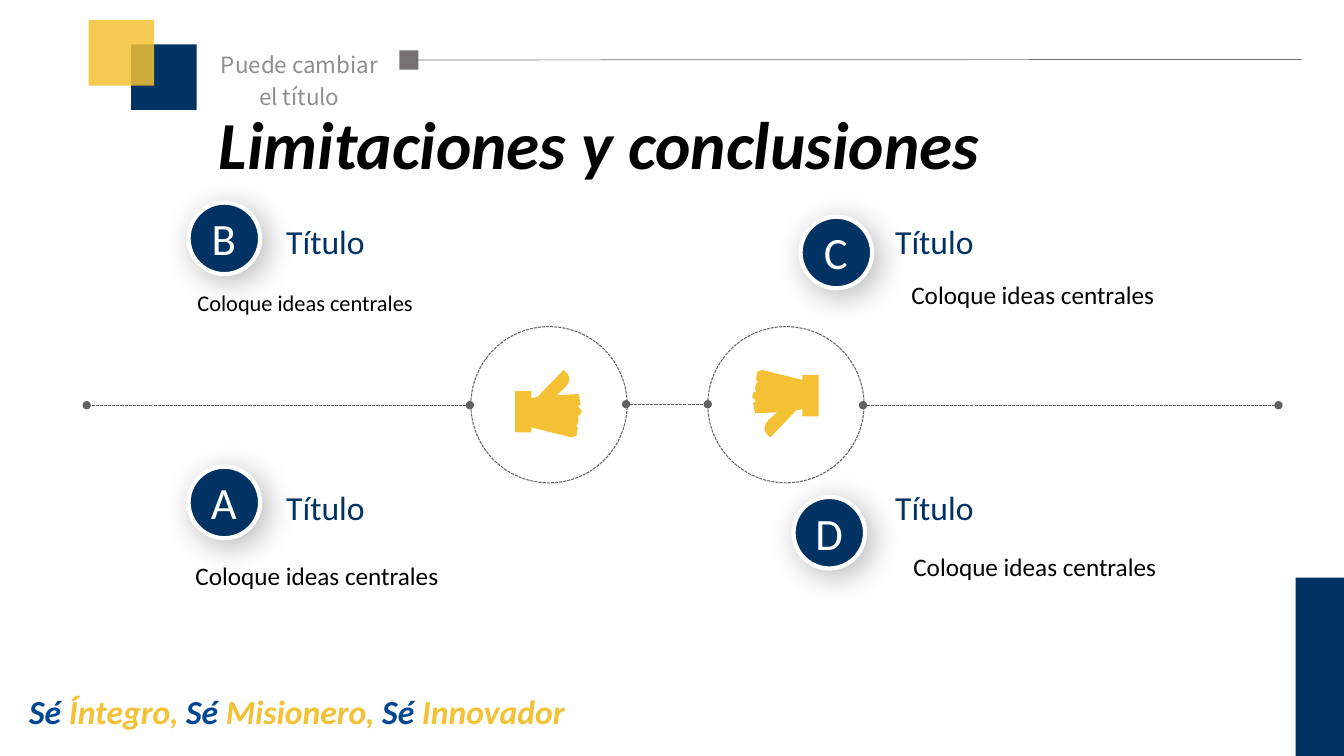
from lxml.etree import SubElement
from pptx import Presentation
from pptx.dml.color import RGBColor
from pptx.enum.dml import MSO_LINE
from pptx.enum.shapes import MSO_CONNECTOR, MSO_SHAPE
from pptx.enum.text import MSO_ANCHOR, MSO_AUTO_SIZE, PP_ALIGN
from pptx.oxml.ns import qn
from pptx.util import Inches, Pt

COLORS = {
    "navy": "003264", "gold": "F3C133", "blue": "004692", "stone": "767171",
    "dash": "626262", "muted": "8E8E8E", "black": "000000", "white": "FFFFFF",
}


def rgb(name):
    return RGBColor.from_string(COLORS[name])


class SlideBuilder:
    font = "Calibri"

    def __init__(self, slide):
        self.slide = slide
        self.shapes = slide.shapes

    def add_runs(self, frame, runs, size, font=None, bold=None, italic=None,
                 align=None, spacing=None):
        paragraph = frame.paragraphs[0]
        paragraph.alignment = align
        paragraph.line_spacing = spacing
        for words, color in runs:
            run = paragraph.add_run()
            run.text = words
            run.font.name = font or self.font
            run.font.size = Pt(size)
            run.font.bold, run.font.italic = bold, italic
            run.font.color.rgb = rgb(color)

    def text(self, box, runs, size, wrap=True, grow=True, margin=None,
             anchor=MSO_ANCHOR.TOP, **style):
        frame = self.shapes.add_textbox(*map(Inches, box)).text_frame
        frame.word_wrap = wrap
        frame.auto_size = MSO_AUTO_SIZE.SHAPE_TO_FIT_TEXT if grow else MSO_AUTO_SIZE.NONE
        frame.vertical_anchor = anchor
        if margin is not None:
            frame.margin_left = frame.margin_right = Inches(margin)
            frame.margin_top = frame.margin_bottom = Inches(margin)
        self.add_runs(frame, runs, size, **style)

    def title(self, box, words, size):
        title = self.shapes.title
        title.left, title.top, title.width, title.height = map(Inches, box)
        frame = title.text_frame
        frame.word_wrap = True
        frame.auto_size = MSO_AUTO_SIZE.NONE
        frame.vertical_anchor = MSO_ANCHOR.BOTTOM
        self.add_runs(frame, [(words, "black")], size, bold=True, italic=True,
                      align=PP_ALIGN.CENTER, spacing=0.9)

    def paint(self, shape, fill):
        shape.shadow.inherit = False
        shape.line.fill.background()
        if fill:
            shape.fill.solid()
            shape.fill.fore_color.rgb = rgb(fill)
        else:
            shape.fill.background()
        return shape

    def shape(self, kind, box, fill=None, alpha=None):
        shape = self.paint(self.shapes.add_shape(kind, *map(Inches, box)), fill)
        if alpha:
            color = shape._element.spPr.find(qn("a:solidFill"))[0]
            SubElement(color, qn("a:alpha"), val=str(alpha * 1000))
        return shape

    def dash(self, line):
        line.color.rgb = rgb("dash")
        line.width = Pt(0.75)
        line.dash_style = MSO_LINE.SQUARE_DOT

    def connector(self, start, end):
        line = self.shapes.add_connector(MSO_CONNECTOR.STRAIGHT,
                                         *map(Inches, (*start, *end)))
        line.line.color.rgb = rgb("stone")
        line.line.width = Pt(0.5)
        SubElement(line._element.spPr, qn("a:effectLst"))
        return line

    def dotted_link(self, start, end):
        link = self.connector(start, end)
        self.dash(link.line)
        outline = link._element.spPr.find(qn("a:ln"))
        for tip in ("a:headEnd", "a:tailEnd"):
            SubElement(outline, qn(tip), type="oval")

    def ring(self, left, top, size):
        self.dash(self.shape(MSO_SHAPE.OVAL, (left, top, size, size)).line)

    def outline(self, points, fill):
        corners = [(Inches(x), Inches(y)) for x, y in points]
        builder = self.shapes.build_freeform(*corners[0])
        builder.add_line_segments(corners[1:], close=True)
        self.paint(builder.convert_to_shape(), fill)

    def badge(self, letter, left, top):
        disc = self.shape(MSO_SHAPE.OVAL, (left, top, 0.71, 0.71), "navy")
        disc.line.color.rgb = rgb("white")
        disc.line.width = Pt(3)
        effects = disc._element.spPr.find(qn("a:effectLst"))
        shadow = SubElement(effects, qn("a:outerShdw"), blurRad=str(Pt(22)),
                            dist=str(Pt(6)), dir=str(45 * 60000), algn="tl",
                            rotWithShape="0")
        color = SubElement(shadow, qn("a:srgbClr"), val=COLORS["black"])
        SubElement(color, qn("a:alpha"), val="28000")
        self.text((left + 0.12, top + 0.03, 0.46, 0.64), [(letter, "white")], 32,
                  wrap=False, anchor=MSO_ANCHOR.MIDDLE, align=PP_ALIGN.CENTER)


def curve(p0, p1, p2, p3, steps=8):
    """Points along a cubic curve, without its first point."""
    for t in (i / steps for i in range(1, steps + 1)):
        u = 1 - t
        yield tuple(u**3 * a + 3 * u * u * t * b + 3 * u * t * t * c + t**3 * d
                    for a, b, c, d in zip(p0, p1, p2, p3))


THUMB_UP = [
    (5.74, 3.91), (5.76, 4.01), (5.73, 4.03), (5.77, 4.07), (5.76, 4.11),
    (5.73, 4.13), (5.74, 4.15), (5.73, 4.21), (5.71, 4.22), (5.73, 4.24),
    (5.72, 4.32), (5.67, 4.34), (5.35, 4.26), (5.27, 4.24), (5.27, 4.29),
    (5.11, 4.29), (5.11, 3.88), (5.27, 3.88), (5.27, 3.95), (5.33, 3.94),
    (5.59, 3.67), *curve((5.59, 3.67), (5.72, 3.77), (5.6, 3.85), (5.52, 3.92)),
]
# Half a turn about the point midway between the two hands
THUMB_DOWN = [(13.23 - x, 8.01 - y) for x, y in THUMB_UP]

# letter, badge corner, heading corner, idea box, idea size
TOPICS = [
    ("A", (1.87, 4.63), (2.74, 4.78), (1.84, 5.51, 2.98, 0.71), 18),
    ("D", (7.87, 4.93), (8.78, 4.78), (8.96, 5.42, 2.98, 0.71), 18),
    ("C", (7.94, 2.15), (8.78, 2.14), (8.94, 2.72, 2.98, 0.71), 18),
    ("B", (1.87, 2.01), (2.74, 2.14), (1.86, 2.82, 3.25, 0.37), 16),
]


def main():
    deck = Presentation()
    deck.slide_width, deck.slide_height = Inches(13.33), Inches(7.5)
    page = SlideBuilder(deck.slides.add_slide(deck.slide_layouts[5]))

    # Header
    rule_square = page.shape(MSO_SHAPE.RECTANGLE, (3.96, 0.5, 0.19, 0.19), "stone")
    page.connector((12.91, 0.59), (4.15, 0.59)).end_connect(rule_square, 3)
    page.text((2.1, 0.45, 1.74, 0.36), [("Puede cambiar el título", "muted")], 16,
              grow=False, margin=0, font="Noto Sans CJK SC",
              align=PP_ALIGN.CENTER, spacing=1.2)
    page.shape(MSO_SHAPE.RECTANGLE, (1.3, 0.44, 0.65, 0.65), "navy")
    page.shape(MSO_SHAPE.RECTANGLE, (0.88, 0.2, 0.65, 0.65), "gold", alpha=85)
    page.title((0.88, 0.43, 10.13, 1.45), "Limitaciones y conclusiones", 48)

    # Central axis with the two hands
    for left in (4.67, 7.02):
        page.ring(left, 3.24, 1.55)
    for start, end, y in ((6.21, 7.02, 4.01), (12.68, 8.56, 4.02), (4.66, 0.86, 4.02)):
        page.dotted_link((start, y), (end, y))
    for thumb in (THUMB_UP, THUMB_DOWN):
        page.outline(thumb, "gold")

    # Four topics
    for letter, badge, heading, idea, size in TOPICS:
        page.badge(letter, *badge)
        page.text((*heading, 0.99, 0.5), [("Título", "navy")], 24, wrap=False)
        page.text(idea, [("Coloque ideas centrales", "black")], size)

    # Footer motto and corner bar
    motto = [("Sé", "blue"), (" Íntegro, ", "gold"), ("Sé", "blue"),
             (" Misionero, ", "gold"), ("Sé", "blue"), (" Innovador", "gold")]
    page.text((0.19, 6.81, 5.56, 0.5), motto, 24, wrap=False, bold=True, italic=True)
    page.shape(MSO_SHAPE.RECTANGLE, (12.85, 5.73, 0.48, 1.77), "navy")

    deck.save("out.pptx")


if __name__ == "__main__":
    main()
